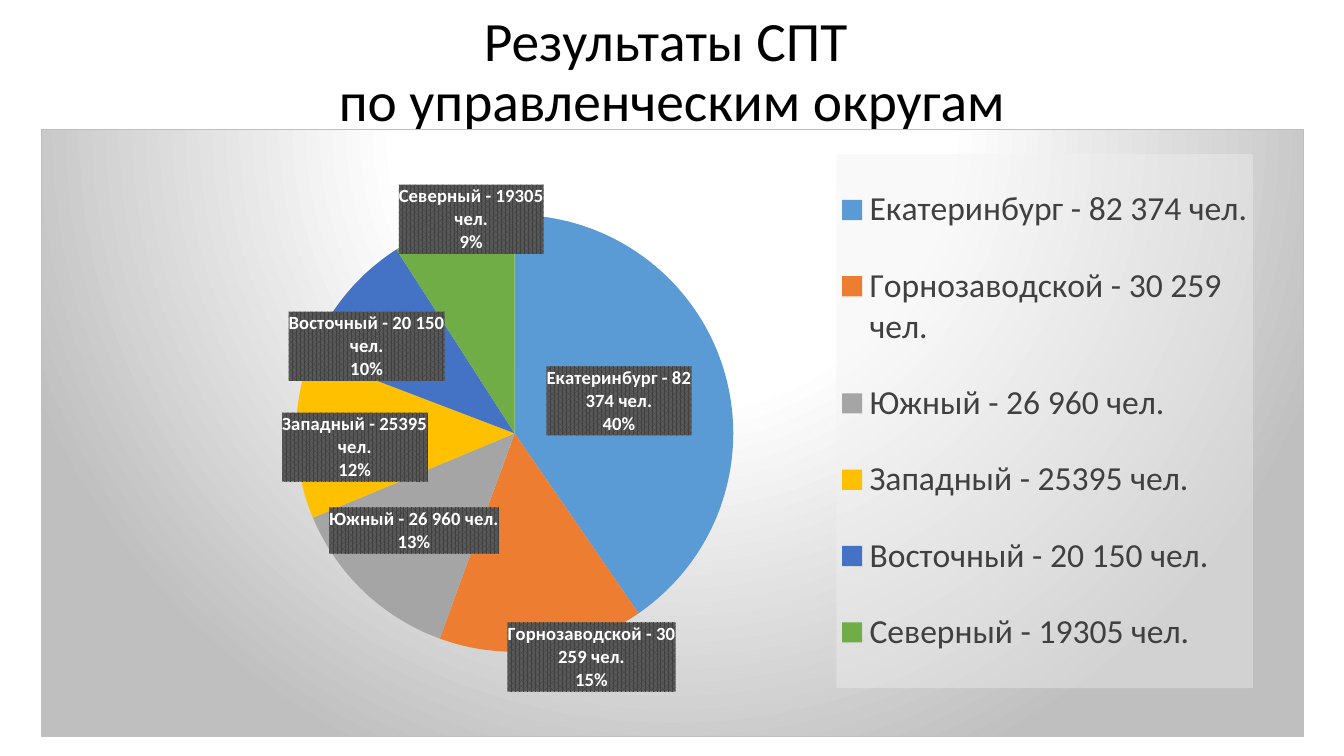
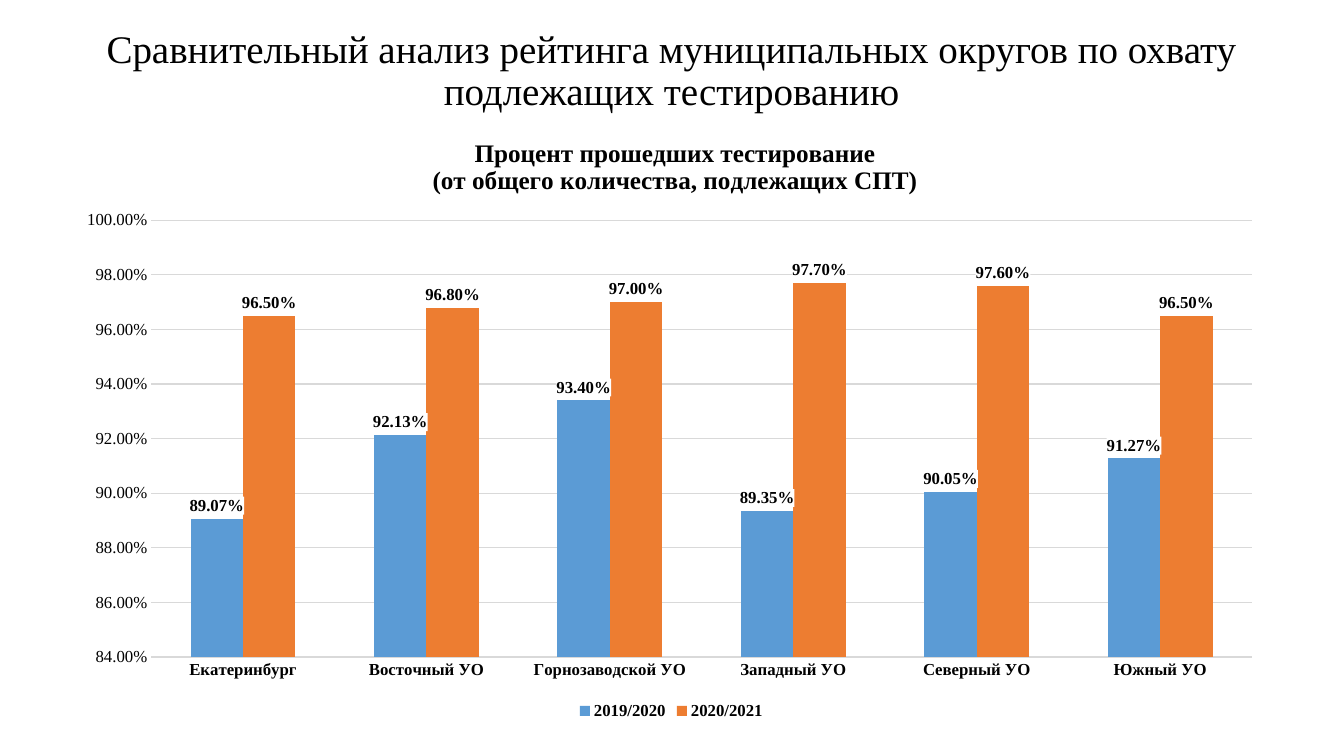
from copy import deepcopy

from lxml import etree
from pptx import Presentation
from pptx.chart.data import CategoryChartData
from pptx.dml.color import RGBColor
from pptx.enum import chart as charts, text
from pptx.oxml import parse_xml
from pptx.oxml.ns import nsdecls, qn
from pptx.util import Cm, Pt

BLACK = RGBColor(0x00, 0x00, 0x00)
WHITE = RGBColor(0xFF, 0xFF, 0xFF)
LEGEND_GREY = RGBColor(0x40, 0x40, 0x40)
GRID_GREY = RGBColor(0xD9, 0xD9, 0xD9)
BLUE = RGBColor(0x5B, 0x9B, 0xD5)
ORANGE = RGBColor(0xED, 0x7D, 0x31)
GREY = RGBColor(0xA5, 0xA5, 0xA5)
GOLD = RGBColor(0xFF, 0xC0, 0x00)
INDIGO = RGBColor(0x44, 0x72, 0xC4)
GREEN = RGBColor(0x70, 0xAD, 0x47)
SANS = "Calibri"
SERIF = "Times New Roman"

# Category, share in percent, colour, label shift as a fraction of the chart
DISTRICTS = [
    ("Екатеринбург - 82 374 чел.", 40, BLUE, (0, 0)),
    ("Горнозаводской - 30 259 чел.", 15, ORANGE, (0.05, 0.19)),
    ("Южный - 26 960 чел.", 13, GREY, (-0.02, 0.03)),
    ("Западный - 25395 чел.", 12, GOLD, (-0.04, 0.02)),
    ("Восточный - 20 150 чел.", 10, INDIGO, (-0.05, -0.03)),
    ("Северный - 19305 чел.", 9, GREEN, (-0.01, -0.18)),
]
COVERAGE_DISTRICTS = ["Екатеринбург", "Восточный УО", "Горнозаводской УО",
                      "Западный УО", "Северный УО", "Южный УО"]
COVERAGE = [
    ("2019/2020", [0.8907, 0.9213, 0.934, 0.8935, 0.9005, 0.9127], BLUE),
    ("2020/2021", [0.965, 0.968, 0.97, 0.977, 0.976, 0.965], ORANGE),
]

GRADIENT_FILL = """<a:gradFill><a:gsLst>
<a:gs pos="0"><a:srgbClr val="FFFFFF"/></a:gs>
<a:gs pos="39000"><a:srgbClr val="FFFFFF"/></a:gs>
<a:gs pos="100000"><a:srgbClr val="BFBFBF"/></a:gs></a:gsLst>
<a:path path="circle"><a:fillToRect l="50000" t="-80000" r="50000" b="180000"/></a:path>
</a:gradFill>
<a:ln w="9525"><a:solidFill><a:srgbClr val="BFBFBF"/></a:solidFill></a:ln>"""
LEGEND_FILL = ('<a:solidFill><a:srgbClr val="F2F2F2"><a:alpha val="39000"/>'
               '</a:srgbClr></a:solidFill>')
PATTERN_FILL = """<a:pattFill prst="pct75">
<a:fgClr><a:srgbClr val="404040"/></a:fgClr>
<a:bgClr><a:srgbClr val="595959"/></a:bgClr></a:pattFill>"""
WHITE_FILL = '<a:solidFill><a:srgbClr val="FFFFFF"/></a:solidFill>'


def set_font(font, name, size, color, bold=False):
    font.name = name
    font.size = Pt(size)
    font.color.rgb = color
    font.bold = bold


def shape_properties(content):
    return parse_xml(f'<c:spPr {nsdecls("c", "a")}>{content}</c:spPr>')


def manual_layout(**values):
    """Return a chart layout; values are c:manualLayout children in order."""
    children = "".join(f'<c:{key} val="{value}"/>' for key, value in values.items())
    return parse_xml(f'<c:layout {nsdecls("c")}><c:manualLayout>{children}'
                     '</c:manualLayout></c:layout>')


def place(element, **values):
    """Put a plot area, legend or title at a fixed place in its chart."""
    for old in element.findall(qn("c:layout")):
        element.remove(old)
    layout = manual_layout(**values)
    overlay = element.find(qn("c:overlay"))
    if overlay is None:
        element.insert(0, layout)
    else:
        overlay.addprevious(layout)


def place_box(element, x, y, w, h, **target):
    place(element, **target, xMode="edge", yMode="edge", x=x, y=y, w=w, h=h)


def plot_area(chart):
    return chart.element.find(qn("c:chart")).find(qn("c:plotArea"))


def add_title(slide, box, lines, font, size):
    shape = slide.shapes.add_textbox(*box)
    frame = shape.text_frame
    frame.word_wrap = True
    frame.vertical_anchor = text.MSO_ANCHOR.MIDDLE
    paragraph = frame.paragraphs[0]
    paragraph.alignment = text.PP_ALIGN.CENTER
    paragraph.line_spacing = 0.9
    for index, line in enumerate(lines):
        if index:
            paragraph.add_line_break()
        run = paragraph.add_run()
        run.text = line
        set_font(run.font, font, size, BLACK)


def add_chart(slide, box, kind, categories, series, number_format):
    data = CategoryChartData(number_format=number_format)
    data.categories = categories
    for name, values in series:
        data.add_series(name, values)
    chart = slide.shapes.add_chart(kind, *box, data).chart
    set_font(chart.font, SANS, 10, BLACK)
    return chart


def add_legend(chart, position, font, size, color, bold=False):
    chart.has_legend = True
    legend = chart.legend
    legend.position = position
    legend.include_in_layout = False
    set_font(legend.font, font, size, color, bold)
    return legend._element


def style_labels(labels, number_format, font, size, color, fill):
    """Format data labels and return their XML element."""
    labels.number_format = number_format
    labels.number_format_is_linked = False
    set_font(labels.font, font, size, color, True)
    element = labels._element
    element.find(qn("c:txPr")).addprevious(shape_properties(fill))
    return element


def shift_labels(element, shifts):
    """Give each point its own label, moved from the default place."""
    shared = [child for child in element if child.tag != qn("c:showLeaderLines")]
    for index, (x, y) in enumerate(shifts):
        label = parse_xml(f'<c:dLbl {nsdecls("c")}><c:idx val="{index}"/></c:dLbl>')
        label.append(manual_layout(x=x, y=y))
        label.extend(deepcopy(child) for child in shared)
        element.insert(index, label)


def add_district_pie(slide, box):
    names, shares, colors, shifts = zip(*DISTRICTS)
    chart = add_chart(slide, box, charts.XL_CHART_TYPE.PIE, names,
                      [("Series 1", shares)], "General")
    chart.has_title = False
    chart.plots[0].vary_by_categories = True
    chart.element.find(qn("c:chart")).addnext(shape_properties(GRADIENT_FILL))
    place_box(plot_area(chart), 0.2, 0.14, 0.35, 0.72, layoutTarget="inner")

    legend = add_legend(chart, charts.XL_LEGEND_POSITION.RIGHT, SANS, 24, LEGEND_GREY)
    place_box(legend, 0.63, 0.04, 0.33, 0.88)
    legend.find(qn("c:overlay")).addnext(shape_properties(LEGEND_FILL))

    series = chart.plots[0].series[0]
    for index, color in enumerate(colors):
        fill = series.points[index].format.fill
        fill.solid()
        fill.fore_color.rgb = color
    labels = series.data_labels
    labels.show_value = False
    labels.show_category_name = True
    labels.show_percentage = True
    labels.position = charts.XL_LABEL_POSITION.CENTER
    element = style_labels(labels, "0%", SANS, 13.3, WHITE, PATTERN_FILL)
    separator = etree.Element(qn("c:separator"))
    separator.text = "\n"
    element.find(qn("c:showBubbleSize")).addnext(separator)
    shift_labels(element, shifts)


def add_chart_title(chart, lines):
    chart.has_title = True
    frame = chart.chart_title.text_frame
    for index, line in enumerate(lines):
        paragraph = frame.add_paragraph() if index else frame.paragraphs[0]
        run = paragraph.add_run()
        run.text = line
        set_font(run.font, SERIF, 18, BLACK, True)
    place(chart.chart_title._element, xMode="edge", yMode="edge", x=0.3, y=0.03)


def style_axis(axis, bold):
    axis.major_tick_mark = charts.XL_TICK_MARK.NONE
    axis.minor_tick_mark = charts.XL_TICK_MARK.NONE
    axis.format.line.fill.background()
    set_font(axis.tick_labels.font, SERIF, 12, BLACK, bold)


def add_coverage_columns(slide, box):
    chart = add_chart(slide, box, charts.XL_CHART_TYPE.COLUMN_CLUSTERED,
                      COVERAGE_DISTRICTS, [row[:2] for row in COVERAGE], "0.00%")
    add_chart_title(chart, ["Процент прошедших тестирование",
                            "(от общего количества, подлежащих СПТ)"])
    place_box(plot_area(chart), 0.07, 0.17, 0.91, 0.72, layoutTarget="inner")
    add_legend(chart, charts.XL_LEGEND_POSITION.BOTTOM, SERIF, 12, BLACK, True)

    style_axis(chart.category_axis, True)
    axis = chart.value_axis
    style_axis(axis, False)
    axis.minimum_scale, axis.maximum_scale, axis.major_unit = 0.84, 1, 0.02
    axis.tick_labels.number_format = "0.00%"
    axis.tick_labels.number_format_is_linked = False
    axis.has_major_gridlines = True
    grid_line = axis.major_gridlines.format.line
    grid_line.color.rgb = GRID_GREY
    grid_line.width = Pt(0.75)

    plot = chart.plots[0]
    plot.vary_by_categories = False
    plot.gap_width = 150
    plot.overlap = 0
    for series, (_, _, color) in zip(plot.series, COVERAGE):
        series.format.fill.solid()
        series.format.fill.fore_color.rgb = color
        labels = series.data_labels
        labels.show_value = True
        labels.position = charts.XL_LABEL_POSITION.OUTSIDE_END
        style_labels(labels, "0.00%", SERIF, 12, BLACK, WHITE_FILL)


def build_district_slide(slide):
    add_title(slide, (Cm(2.33), Cm(0.46), Cm(29.21), Cm(2.77)),
              ["Результаты СПТ ", "по управленческим округам"], SANS, 39.6)
    add_district_pie(slide, (Cm(1.03), Cm(3.26), Cm(31.83), Cm(15.32)))


def build_coverage_slide(slide):
    add_title(slide, (Cm(1.57), Cm(0.69), Cm(30.71), Cm(2.26)),
              ["Сравнительный анализ рейтинга муниципальных округов по охвату "
               "подлежащих тестированию"], SERIF, 27.9)
    add_coverage_columns(slide, (Cm(1.68), Cm(2.95), Cm(30.48), Cm(15.29)))


def main():
    presentation = Presentation()
    presentation.slide_width = Cm(33.87)
    presentation.slide_height = Cm(19.05)
    blank = presentation.slide_layouts[6]
    for build in (build_district_slide, build_coverage_slide):
        build(presentation.slides.add_slide(blank))
    presentation.save("out.pptx")


if __name__ == "__main__":
    main()
